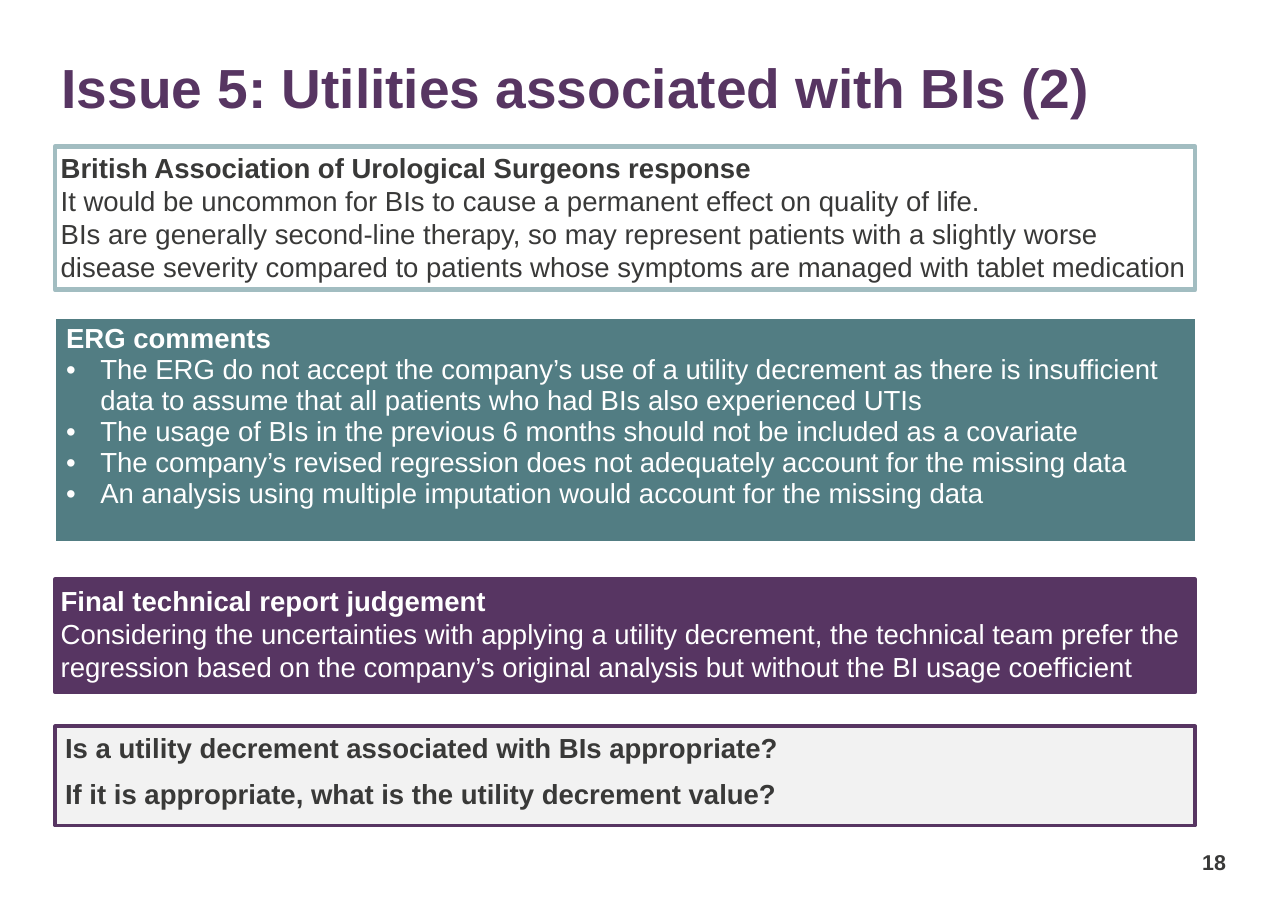
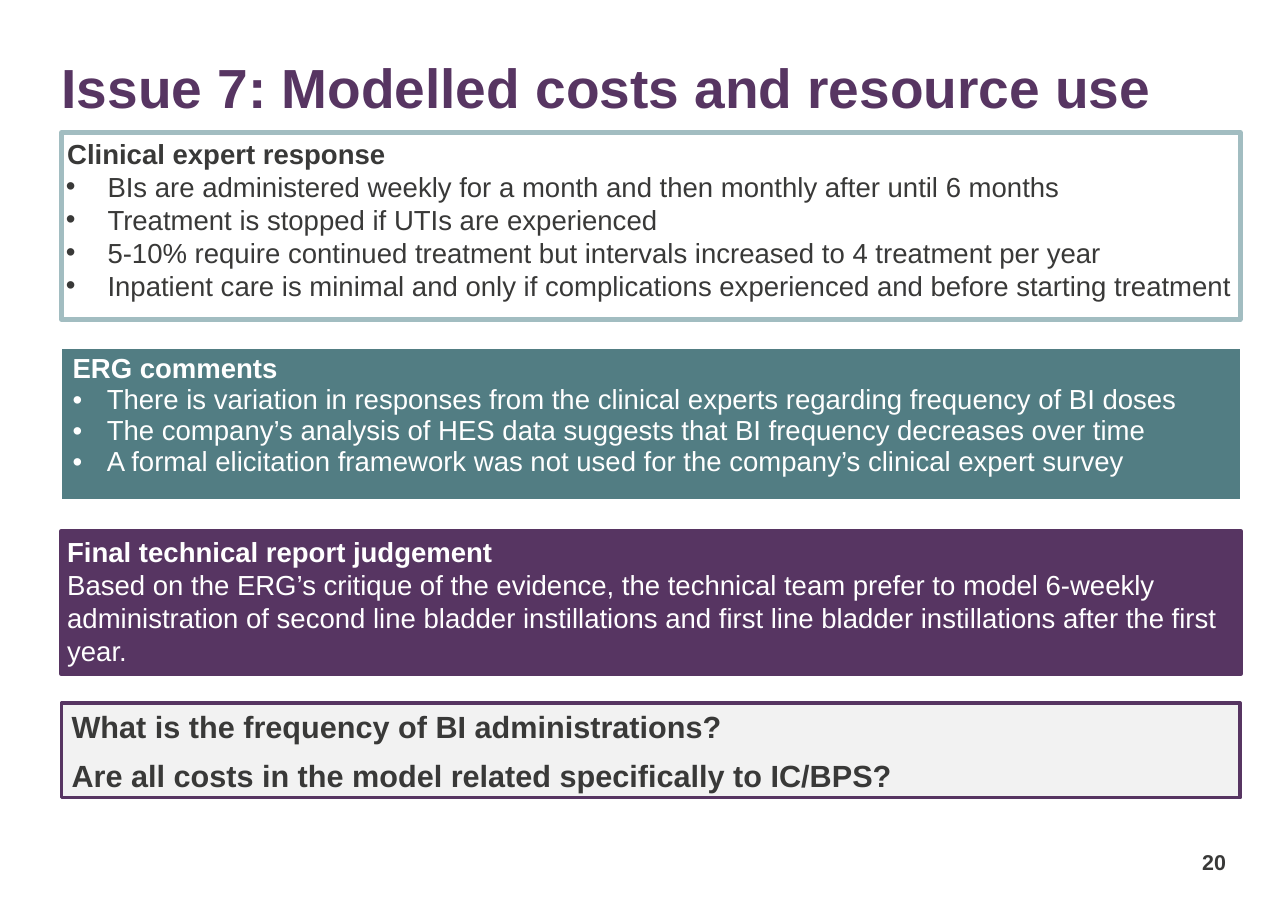
from dataclasses import dataclass

from lxml import etree
from pptx import Presentation
from pptx.dml.color import RGBColor
from pptx.enum.shapes import MSO_SHAPE
from pptx.enum.text import MSO_ANCHOR, PP_ALIGN
from pptx.oxml.ns import qn
from pptx.util import Cm, Pt

RECT = MSO_SHAPE.RECTANGLE
TOP, BOTTOM = MSO_ANCHOR.TOP, MSO_ANCHOR.BOTTOM
LEFT, RIGHT = PP_ALIGN.LEFT, PP_ALIGN.RIGHT

FONT = "Arial"
COLOURS = {
    "plum": "573562",
    "teal": "527D83",
    "mist": "A2BDC1",
    "grey": "F2F2F2",
    "ink": "393938",
    "white": "FFFFFF",
}


@dataclass(frozen=True)
class Style:
    """Look of one kind of band."""
    ink: str
    fill: str = ""
    line: str = ""
    weight: float = 3
    inset: float = 0.1
    indent: float = 0.03
    gap: float = 0
    lead: float = 1.2
    grid: bool = False


@dataclass(frozen=True)
class Band:
    """One band of text; a hang above zero makes its lines bullets."""
    style: Style
    top: float
    height: float
    head: str
    lines: list[str]
    hang: float = 0
    size: int = 18
    strong: bool = False


@dataclass(frozen=True)
class Page:
    title: str
    number: str
    left: float
    width: float
    bands: list[Band]


REPLY = Style("ink", line="mist")
REVIEW = Style("white", fill="teal", indent=0, lead=0, grid=True)
VERDICT = Style("white", fill="plum", line="plum")
QUERY = Style("ink", fill="grey", line="plum", weight=2.25, inset=0.2, gap=8.5)

PAGES = [
    Page("Issue 5: Utilities associated with BIs (2)", "18", 1.27, 26.29, [
        Band(REPLY, 3.38, 3.3, "British Association of Urological Surgeons response", [
            "It would be uncommon for BIs to cause a permanent effect on quality of life.",
            "BIs are generally second-line therapy, so may represent patients with a "
            "slightly worse disease severity compared to patients whose symptoms are "
            "managed with tablet medication",
        ]),
        Band(REVIEW, 7.34, 5.18, "ERG comments", [
            "The ERG do not accept the company’s use of a utility decrement as there is "
            "insufficient data to assume that all patients who had BIs also experienced UTIs",
            "The usage of BIs in the previous 6 months should not be included as a covariate",
            "The company’s revised regression does not adequately account for the missing data",
            "An analysis using multiple imputation would account for the missing data",
        ], hang=0.79),
        Band(VERDICT, 13.36, 2.59, "Final technical report judgement", [
            "Considering the uncertainties with applying a utility decrement, the technical "
            "team prefer the regression based on the company’s original analysis but "
            "without the BI usage coefficient",
        ]),
        Band(QUERY, 16.74, 2.29, "Is a utility decrement associated with BIs appropriate?", [
            "If it is appropriate, what is the utility decrement value?",
        ], strong=True),
    ]),
    Page("Issue 7: Modelled costs and resource use", "20", 1.42, 27.18, [
        Band(REPLY, 3.05, 4.32, "Clinical expert response", [
            "BIs are administered weekly for a month and then monthly after until 6 months",
            "Treatment is stopped if UTIs are experienced",
            "5-10% require continued treatment but intervals increased to 4 treatment per year",
            "Inpatient care is minimal and only if complications experienced and before "
            "starting treatment",
        ], hang=0.96),
        Band(REVIEW, 8.03, 3.53, "ERG comments", [
            "There is variation in responses from the clinical experts regarding frequency "
            "of BI doses",
            "The company’s analysis of HES data suggests that BI frequency decreases over time",
            "A formal elicitation framework was not used for the company’s clinical expert survey",
        ], hang=0.79),
        Band(VERDICT, 12.24, 3.3, "Final technical report judgement", [
            "Based on the ERG’s critique of the evidence, the technical team prefer to model "
            "6-weekly administration of second line bladder instillations and first line "
            "bladder instillations after the first year.",
        ]),
        Band(QUERY, 16.21, 2.18, "What is the frequency of BI administrations?", [
            "Are all costs in the model related specifically to IC/BPS?",
        ], size=20, strong=True),
    ]),
]


def tint(name: str) -> RGBColor:
    return RGBColor.from_string(COLOURS[name])


def write(frame, text: str, *, size: float, ink: str, bold: bool = False,
          align=LEFT, lead: float = 0, gap: float = 0,
          indent: float = 0, hang: float = 0) -> None:
    """Add a paragraph; lead is the line pitch in points, 0 for single."""
    first = not frame.text
    para = frame.paragraphs[0] if first else frame.add_paragraph()
    para.alignment = align
    props = para._p.get_or_add_pPr()
    props.set("marL", str(Cm(hang or indent)))
    props.set("indent", str(Cm(-hang)))
    if hang:
        shade = etree.SubElement(props, qn("a:buClr"))
        etree.SubElement(shade, qn("a:srgbClr"), val=COLOURS[ink])
        etree.SubElement(props, qn("a:buFont"), typeface=FONT)
        etree.SubElement(props, qn("a:buChar"), char="•")
    if lead:
        para.line_spacing = Pt(lead)
    if gap and not first:
        para.space_before = Pt(gap)
    run = para.add_run()
    run.text = text
    font = run.font
    font.name, font.size, font.bold = FONT, Pt(size), bold
    font.color.rgb = tint(ink)


def set_frame(frame, inset: float = 0, rest: float = 0, anchor=TOP) -> None:
    frame.word_wrap = True
    frame.vertical_anchor = anchor
    frame.margin_left = Cm(inset)
    frame.margin_top = frame.margin_right = frame.margin_bottom = Cm(rest)


def add_label(slide, box: tuple[float, ...], text: str, *, anchor=TOP, **form) -> None:
    frame = slide.shapes.add_textbox(*map(Cm, box)).text_frame
    set_frame(frame, anchor=anchor)
    write(frame, text, bold=True, **form)


def add_cell(slide, box: tuple[float, ...], style: Style):
    """Draw a one-cell table with white edges and return its text frame."""
    table = slide.shapes.add_table(1, 1, *map(Cm, box)).table
    table.first_row = table.horz_banding = False
    cell = table.cell(0, 0)
    props = cell._tc.get_or_add_tcPr()
    for side, weight in (("L", 1), ("R", 1), ("T", 1), ("B", 3)):
        edge = etree.SubElement(props, qn(f"a:ln{side}"), w=str(Pt(weight)))
        fill = etree.SubElement(edge, qn("a:solidFill"))
        etree.SubElement(fill, qn("a:srgbClr"), val=COLOURS["white"])
    cell.fill.solid()
    cell.fill.fore_color.rgb = tint(style.fill)
    return cell.text_frame


def add_box(slide, box: tuple[float, ...], style: Style):
    """Draw an outlined box and return its text frame."""
    shape = slide.shapes.add_shape(RECT, *map(Cm, box))
    shape.shadow.inherit = False
    if style.fill:
        shape.fill.solid()
        shape.fill.fore_color.rgb = tint(style.fill)
    else:
        shape.fill.background()
    shape.line.color.rgb = tint(style.line)
    shape.line.width = Pt(style.weight)
    set_frame(shape.text_frame, style.inset, 0.1)
    return shape.text_frame


def add_band(slide, page: Page, band: Band) -> None:
    style = band.style
    draw = add_cell if style.grid else add_box
    frame = draw(slide, (page.left, band.top, page.width, band.height), style)
    form = dict(size=band.size, ink=style.ink, gap=style.gap,
                lead=style.lead * band.size, indent=style.indent)
    write(frame, band.head, bold=True, **form)
    for line in band.lines:
        write(frame, line, bold=band.strong, hang=band.hang, **form)


def add_page(deck, page: Page) -> None:
    slide = deck.slides.add_slide(deck.slide_layouts[6])
    # Title and page number
    add_label(slide, (1.42, 1.27, 27.18, 2.13), page.title,
              size=36, ink="plum", lead=42)
    add_label(slide, (26.87, 19.25, 1.4, 0.91), page.number,
              size=14, ink="ink", align=RIGHT, anchor=BOTTOM)
    # Bands
    for band in page.bands:
        add_band(slide, page, band)


def main() -> None:
    deck = Presentation()
    deck.slide_width, deck.slide_height = Cm(29.7), Cm(21)
    for page in PAGES:
        add_page(deck, page)
    deck.save("out.pptx")


if __name__ == "__main__":
    main()
